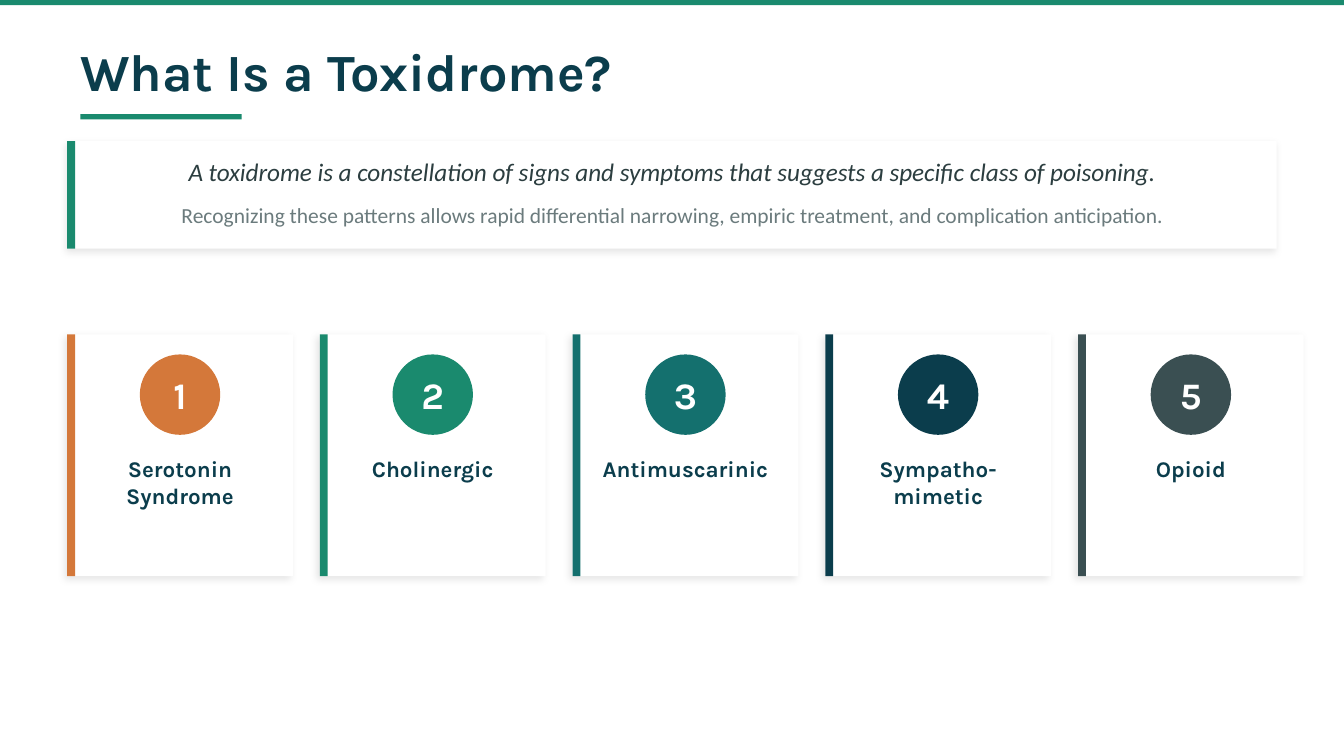
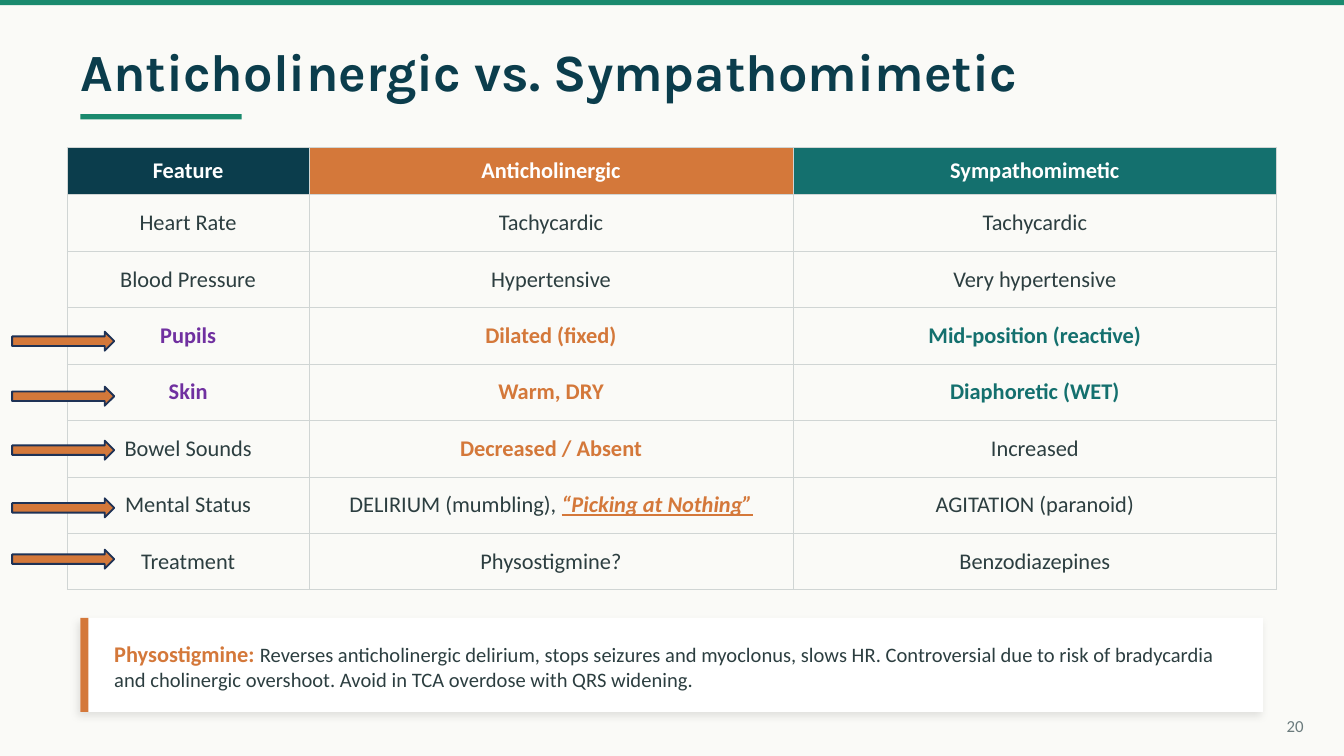
from dataclasses import dataclass, replace

from lxml import etree
from pptx import Presentation
from pptx.dml.color import RGBColor
from pptx.enum.shapes import MSO_SHAPE
from pptx.enum.text import MSO_ANCHOR, MSO_AUTO_SIZE, PP_ALIGN
from pptx.oxml import parse_xml
from pptx.oxml.ns import nsdecls, qn
from pptx.util import Cm, Pt

# Palette
NAVY = RGBColor(0x0B, 0x3D, 0x4C)
GREEN = RGBColor(0x1A, 0x8A, 0x6E)
TEAL = RGBColor(0x14, 0x70, 0x6E)
ORANGE = RGBColor(0xD4, 0x78, 0x3A)
SLATE = RGBColor(0x3A, 0x4F, 0x52)
PURPLE = RGBColor(0x70, 0x30, 0xA0)
INK = RGBColor(0x2C, 0x3E, 0x40)
GRAY = RGBColor(0x6B, 0x7B, 0x7D)
ARROW_LINE = RGBColor(0x1E, 0x32, 0x56)
GRID = RGBColor(0xD0, 0xD5, 0xD4)
WHITE = RGBColor(0xFF, 0xFF, 0xFF)
CREAM = RGBColor(0xFA, 0xFA, 0xF7)

RECTANGLE = MSO_SHAPE.RECTANGLE
OVAL = MSO_SHAPE.OVAL
RIGHT_ARROW = MSO_SHAPE.RIGHT_ARROW
LEFT, CENTER, RIGHT = PP_ALIGN.LEFT, PP_ALIGN.CENTER, PP_ALIGN.RIGHT
TOP, MIDDLE = MSO_ANCHOR.TOP, MSO_ANCHOR.MIDDLE
TITLE_ONLY = 5


@dataclass(frozen=True)
class Box:
    """A rectangle in centimetres."""
    left: float
    top: float
    width: float
    height: float

    def inner(self, left, top, width, height):
        return Box(self.left + left, self.top + top, width, height)

    def lengths(self):
        return Cm(self.left), Cm(self.top), Cm(self.width), Cm(self.height)


@dataclass(frozen=True)
class Style:
    size: float
    color: RGBColor
    font: str = "Calibri"
    bold: bool = False
    italic: bool = False
    underline: bool = False


TITLE = Style(28, NAVY, "Karla", bold=True)
NUMBER = Style(20, WHITE, "Karla", bold=True)
LABEL = Style(12, NAVY, "Karla", bold=True)
DEFINITION = Style(13.5, INK, italic=True)
SUPPORT = Style(11.5, GRAY)
PAGE = Style(9, GRAY)
NOTE = Style(11, INK)
BODY = Style(12, INK)
HEADER = Style(12, WHITE, bold=True)
KEY = Style(12, PURPLE, bold=True)
WARM = Style(12, ORANGE, bold=True)
COOL = Style(12, TEAL, bold=True)
QUOTE = replace(WARM, italic=True, underline=True)

SLIDE = Box(0, 0, 25.4, 14.29)

FAMILIES = [
    (ORANGE, ["Serotonin", "Syndrome"]),
    (GREEN, ["Cholinergic"]),
    (TEAL, ["Antimuscarinic"]),
    (NAVY, ["Sympatho-", "mimetic"]),
    (SLATE, ["Opioid"]),
]

HEADINGS = [("Feature", NAVY), ("Anticholinergic", ORANGE), ("Sympathomimetic", TEAL)]

# Each cell is a list of (text, style) runs
COMPARISON = [
    [[("Heart Rate", BODY)], [("Tachycardic", BODY)], [("Tachycardic", BODY)]],
    [[("Blood Pressure", BODY)], [("Hypertensive", BODY)], [("Very hypertensive", BODY)]],
    [[("Pupils", KEY)], [("Dilated (fixed)", WARM)], [("Mid-position (reactive)", COOL)]],
    [[("Skin", KEY)], [("Warm, DRY", WARM)], [("Diaphoretic (WET)", COOL)]],
    [[("Bowel Sounds", BODY)], [("Decreased / Absent", WARM)], [("Increased", BODY)]],
    [[("Mental Status", BODY)],
     [("DELIRIUM (mumbling), ", BODY), ("“Picking at Nothing”", QUOTE)],
     [("AGITATION (paranoid)", BODY)]],
    [[("Treatment", BODY)], [("Physostigmine?", BODY)], [("Benzodiazepines", BODY)]],
]

# Arrow tops, measured from the top of the table
ARROW_TOPS = [3.48, 4.52, 5.54, 6.63, 7.6]


# Text
def write_paragraph(paragraph, runs, align):
    paragraph.alignment = align
    for text, style in runs:
        run = paragraph.add_run()
        run.text = text
        font = run.font
        font.name = style.font
        font.size = Pt(style.size)
        font.color.rgb = style.color
        font.bold = style.bold
        font.italic = style.italic
        font.underline = style.underline


def fill_frame(frame, paragraphs, align=CENTER, anchor=MIDDLE):
    frame.word_wrap = True
    frame.auto_size = MSO_AUTO_SIZE.NONE
    frame.vertical_anchor = anchor
    frame.margin_left = frame.margin_top = frame.margin_right = frame.margin_bottom = 0
    for index, runs in enumerate(paragraphs):
        paragraph = frame.add_paragraph() if index else frame.paragraphs[0]
        write_paragraph(paragraph, runs, align)


def add_text(slide, box, paragraphs, align=CENTER, anchor=MIDDLE):
    shape = slide.shapes.add_textbox(*box.lengths())
    fill_frame(shape.text_frame, paragraphs, align, anchor)


# Shapes
def add_filled(slide, kind, box, color):
    shape = slide.shapes.add_shape(kind, *box.lengths())
    shape.shadow.inherit = False
    shape.fill.solid()
    shape.fill.fore_color.rgb = color
    shape.line.fill.background()
    return shape


def add_soft_shadow(shape):
    effects = shape._element.spPr.find(qn("a:effectLst"))
    shadow = etree.SubElement(effects, qn("a:outerShdw"), blurRad=str(Pt(4)),
                              dist=str(Pt(2)), dir="8100000", algn="bl", rotWithShape="0")
    color = etree.SubElement(shadow, qn("a:srgbClr"), val="000000")
    etree.SubElement(color, qn("a:alpha"), val="10000")


def add_panel(slide, box, accent):
    add_soft_shadow(add_filled(slide, RECTANGLE, box, WHITE))
    add_filled(slide, RECTANGLE, box.inner(0, 0, 0.15, box.height), accent)


# Shared frame: background, top band, title and its rule
def add_titled_slide(presentation, title, background):
    slide = presentation.slides.add_slide(presentation.slide_layouts[TITLE_ONLY])
    slide.background.fill.solid()
    slide.background.fill.fore_color.rgb = background
    add_filled(slide, RECTANGLE, SLIDE.inner(0, 0, SLIDE.width, 0.1), GREEN)
    heading = slide.shapes.title
    box = SLIDE.inner(1.52, 0.64, 22.35, 1.4)
    heading.left, heading.top, heading.width, heading.height = box.lengths()
    fill_frame(heading.text_frame, [[(title, TITLE)]], LEFT)
    add_filled(slide, RECTANGLE, box.inner(0, 1.52, 3.05, 0.1), GREEN)
    return slide


# Slide 1 regions
def add_definition(slide, box):
    add_panel(slide, box, GREEN)
    width = box.width - 1.27
    add_text(slide, box.inner(0.64, 0.13, width, 0.89), [[(
        "A toxidrome is a constellation of signs and symptoms "
        "that suggests a specific class of poisoning.", DEFINITION)]])
    add_text(slide, box.inner(0.64, 1.02, width, 0.76), [[(
        "Recognizing these patterns allows rapid differential narrowing, "
        "empiric treatment, and complication anticipation.", SUPPORT)]])


def add_family_card(slide, box, number, color, lines):
    add_panel(slide, box, color)
    diameter = 1.52
    circle = add_filled(
        slide, OVAL,
        box.inner((box.width - diameter) / 2, 0.38, diameter, diameter), color)
    fill_frame(circle.text_frame, [[(str(number), NUMBER)]])
    add_text(slide, box.inner(0.25, 2.29, box.width - 0.5, 1.52),
             [[(line, LABEL)] for line in lines], anchor=TOP)


def add_family_cards(slide, box, gap):
    count = len(FAMILIES)
    width = (box.width - gap * (count - 1)) / count
    for index, (color, lines) in enumerate(FAMILIES):
        card = box.inner(index * (width + gap), 0, width, box.height)
        add_family_card(slide, card, index + 1, color, lines)


# Slide 2 regions
def set_cell_borders(cell):
    properties = cell._tc.get_or_add_tcPr()
    for side in ("lnL", "lnR", "lnT", "lnB"):
        properties.append(parse_xml(
            f'<a:{side} {nsdecls("a")} w="{Pt(0.5)}"><a:solidFill>'
            f'<a:srgbClr val="{GRID}"/></a:solidFill></a:{side}>'))


def write_cell(cell, runs, color=None):
    set_cell_borders(cell)
    if color is None:
        cell.fill.background()
    else:
        cell.fill.solid()
        cell.fill.fore_color.rgb = color
    cell.vertical_anchor = MIDDLE
    write_paragraph(cell.text_frame.paragraphs[0], runs, CENTER)


def add_comparison_table(slide, box):
    header_height = 0.89
    row_height = (box.height - header_height) / len(COMPARISON)
    table = slide.shapes.add_table(
        len(COMPARISON) + 1, len(HEADINGS), *box.lengths()).table
    table.first_row = table.horz_banding = False
    for column, share in zip(table.columns, (0.2, 0.4, 0.4)):
        column.width = Cm(box.width * share)
    for index, row in enumerate(table.rows):
        row.height = Cm(row_height if index else header_height)
    for column, (text, color) in enumerate(HEADINGS):
        write_cell(table.cell(0, column), [(text, HEADER)], color)
    for row, cells in enumerate(COMPARISON, start=1):
        for column, runs in enumerate(cells):
            write_cell(table.cell(row, column), runs)


def add_row_arrows(slide, box):
    for top in ARROW_TOPS:
        arrow = add_filled(slide, RIGHT_ARROW, box.inner(-1.04, top, 1.93, 0.36), ORANGE)
        arrow.line.color.rgb = ARROW_LINE
        arrow.line.width = Pt(1)


def add_treatment_note(slide, box):
    add_panel(slide, box, ORANGE)
    add_text(slide, box.inner(0.64, 0.08, box.width - 1.27, 1.65), [[
        ("Physostigmine: ", WARM),
        ("Reverses anticholinergic delirium, stops seizures and myoclonus, slows HR. "
         "Controversial due to risk of bradycardia and cholinergic overshoot. "
         "Avoid in TCA overdose with QRS widening.", NOTE)]], LEFT)


def add_page_number(slide, box, number):
    add_text(slide, box, [[(str(number), PAGE)]], RIGHT)


# Slides
def build_definition_slide(presentation):
    slide = add_titled_slide(presentation, "What Is a Toxidrome?", WHITE)
    add_definition(slide, SLIDE.inner(1.27, 2.67, 22.86, 2.03))
    add_family_cards(slide, SLIDE.inner(1.27, 6.32, 23.37, 4.57), gap=0.51)


def build_comparison_slide(presentation):
    slide = add_titled_slide(presentation, "Anticholinergic vs. Sympathomimetic", CREAM)
    add_page_number(slide, SLIDE.inner(23.37, 13.34, 1.27, 0.76), 20)
    table_box = SLIDE.inner(1.27, 2.79, 22.86, 8.36)
    add_comparison_table(slide, table_box)
    add_treatment_note(slide, SLIDE.inner(1.52, 11.68, 22.35, 1.78))
    add_row_arrows(slide, table_box)


def main():
    presentation = Presentation()
    presentation.slide_width = Cm(SLIDE.width)
    presentation.slide_height = Cm(SLIDE.height)
    build_definition_slide(presentation)
    build_comparison_slide(presentation)
    presentation.save("out.pptx")


if __name__ == "__main__":
    main()
